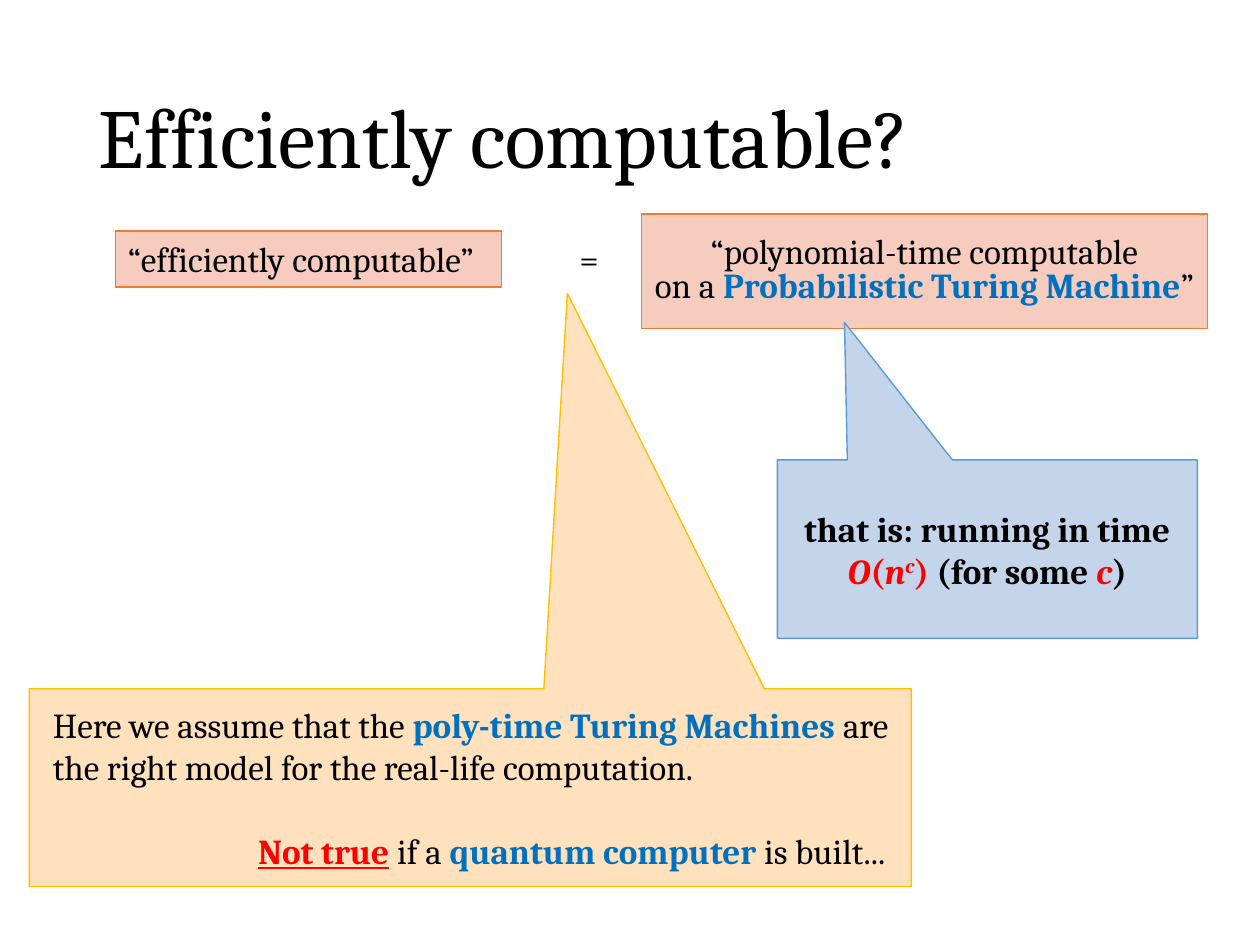
from dataclasses import dataclass
from typing import Optional

import pptx
import pptx.dml.color
import pptx.enum.shapes
import pptx.enum.text
import pptx.util

Pt = pptx.util.Pt
Shape = pptx.enum.shapes.MSO_SHAPE
Align = pptx.enum.text.PP_ALIGN
Anchor = pptx.enum.text.MSO_ANCHOR


# Colours and type sizes
@dataclass(frozen=True)
class Theme:
    font: str = "Cambria"
    title: float = 48
    body: float = 20
    edge: float = 0.79
    black: str = "000000"
    blue: str = "0070C0"
    red: str = "FF0000"
    rose: tuple = ("F6CCBE", "ED7D31")
    sky: tuple = ("C4D5EB", "5B9BD5")
    sand: tuple = ("FFE2BD", "FFC000")


THEME = Theme()


@dataclass(frozen=True)
class Run:
    text: str
    hue: str = THEME.black
    bold: bool = False
    slant: bool = False
    under: bool = False
    raised: bool = False


@dataclass(frozen=True)
class Para:
    runs: tuple
    align: Align = Align.LEFT
    pitch: float = 1.0
    before: float = 0


@dataclass(frozen=True)
class Box:
    place: tuple  # left, top, width, height in points
    paras: tuple
    paint: Optional[tuple] = None  # fill and line
    kind: Shape = Shape.RECTANGLE
    tip: Optional[tuple] = None
    size: float = THEME.body
    sides: tuple = (7.2, 7.2)
    anchor: Anchor = Anchor.MIDDLE


def colour(code: str) -> pptx.dml.color.RGBColor:
    return pptx.dml.color.RGBColor.from_string(code)


def write(frame, box: Box) -> None:
    frame.word_wrap = True
    frame.vertical_anchor = box.anchor
    frame.margin_left, frame.margin_right = map(Pt, box.sides)
    for i, para in enumerate(box.paras):
        line = frame.add_paragraph() if i else frame.paragraphs[0]
        line.alignment = para.align
        line.line_spacing = para.pitch
        line.space_before = Pt(para.before)
        for part in para.runs:
            run = line.add_run()
            run.text = part.text
            font = run.font
            font.name, font.size = THEME.font, Pt(box.size)
            font.bold, font.italic = part.bold, part.slant
            font.underline = part.under
            font.color.rgb = colour(part.hue)
            if part.raised:
                run._r.get_or_add_rPr().set("baseline", "30000")


def draw(slide, box: Box) -> None:
    place = map(Pt, box.place)
    if box.paint is None:
        shape = slide.shapes.add_textbox(*place)
    else:
        shape = slide.shapes.add_shape(box.kind, *place)
        shape.shadow.inherit = False
        fill, edge = box.paint
        shape.fill.solid()
        shape.fill.fore_color.rgb = colour(fill)
        shape.line.color.rgb = colour(edge)
        shape.line.width = Pt(THEME.edge)
        for i, value in enumerate(box.tip or ()):
            shape.adjustments[i] = value
    write(shape.text_frame, box)


# Title
TITLE = Box((49.5, 28.75, 621, 104.4),
            (Para((Run("Efficiently computable?"),), pitch=0.9),),
            size=THEME.title)

# The two sides of the equation
MODEL = Box(
    (366.5, 122.2, 323.5, 65.5),
    (Para((Run("“polynomial-time computable"),), Align.CENTER, 0.8),
     Para((Run("on a "),
           Run("Probabilistic Turing Machine", THEME.blue, bold=True),
           Run("”")), Align.CENTER, 0.8)),
    THEME.rose)
TERM = Box((66, 132, 220.75, 32), (Para((Run("“efficiently computable”"),)),),
           THEME.rose, anchor=Anchor.TOP)
EQUAL = Box((324, 132, 26, 31), (Para((Run("="),)),), anchor=Anchor.TOP)

# Callout on running time
TIME = Box(
    (444.2, 262.8, 240, 102),
    (Para((Run("that is: running in time", bold=True),), Align.CENTER),
     Para((Run("O", THEME.red, bold=True, slant=True),
           Run("(", THEME.red, bold=True),
           Run("n", THEME.red, bold=True, slant=True),
           Run("c", THEME.red, bold=True, slant=True, raised=True),
           Run(")", THEME.red, bold=True),
           Run(" (for some ", bold=True),
           Run("c", THEME.red, bold=True, slant=True),
           Run(")", bold=True)), Align.CENTER)),
    THEME.sky, Shape.RECTANGULAR_CALLOUT, (-0.34, -1.27))

# Callout on the model of computation
CAVEAT = Box(
    (16.8, 393.6, 504, 113),
    (Para((Run("Here we assume that the "),
           Run("poly-time Turing Machines ", THEME.blue, bold=True),
           Run("are the right model for the real-life computation."))),
     Para((Run("Not true", THEME.red, bold=True, under=True),
           Run(" if a "),
           Run("quantum computer ", THEME.blue, bold=True),
           Run("is built... ")), Align.RIGHT, before=24)),
    THEME.sand, Shape.RECTANGULAR_CALLOUT, (0.11, -2.5), sides=(13.5, 11))


def main() -> None:
    deck = pptx.Presentation()
    deck.slide_width, deck.slide_height = Pt(720), Pt(540)
    slide = deck.slides.add_slide(deck.slide_layouts[6])
    for box in (TITLE, MODEL, TERM, EQUAL, TIME, CAVEAT):
        draw(slide, box)
    deck.save("out.pptx")


if __name__ == "__main__":
    main()
